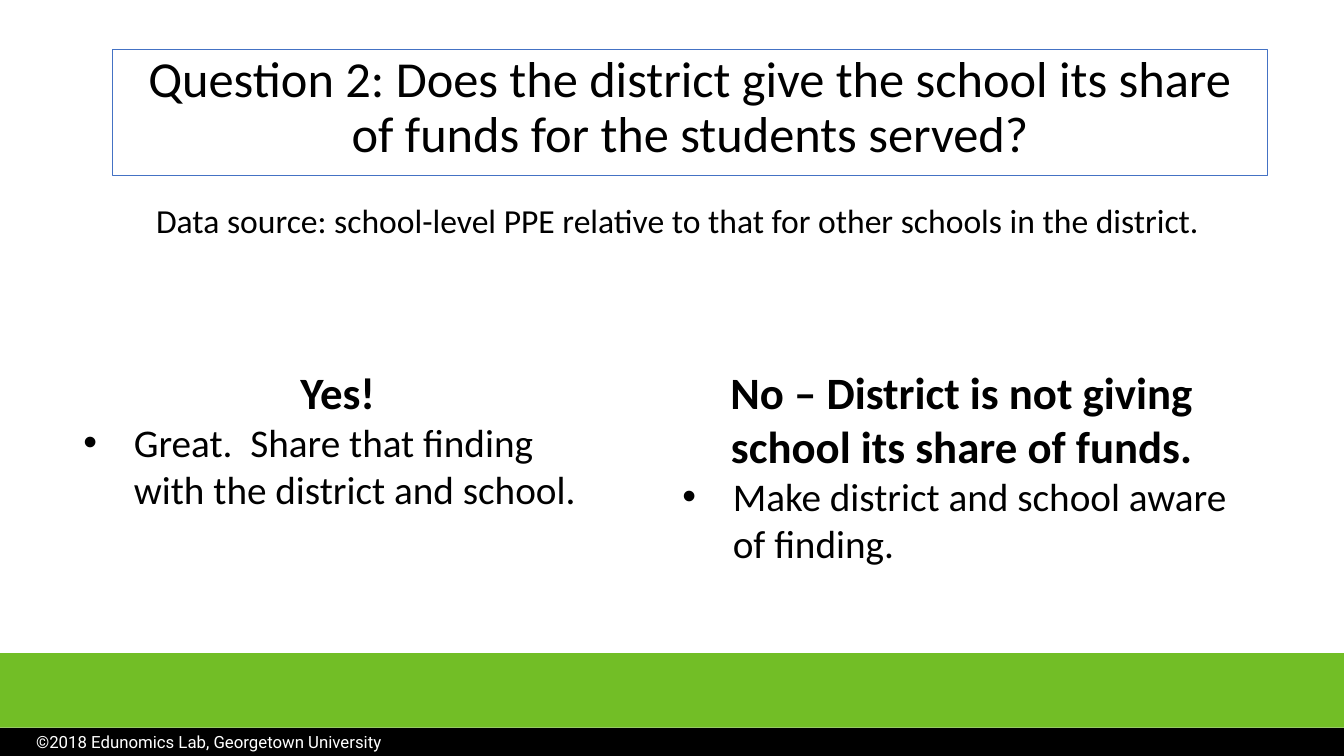
import pptx
import pptx.dml.color
import pptx.enum.shapes
import pptx.enum.text
import pptx.util
from lxml import etree
from pptx.util import Inches

ALIGN = pptx.enum.text.PP_ALIGN


def color(hex_string):
    return pptx.dml.color.RGBColor.from_string(hex_string)


class SlideBuilder:
    body_font = "Calibri"
    footer_font = "Roboto"
    black, white, green, blue = "000000", "FFFFFF", "72BE26", "4472C4"

    def __init__(self, presentation):
        self.slide = presentation.slides.add_slide(presentation.slide_layouts[5])

    def format_text(self, paragraph, size, font=None, ink=None, bold=False, align=ALIGN.CENTER):
        paragraph.alignment = align
        for run in paragraph.runs:
            run.font.name = font or self.body_font
            run.font.size = pptx.util.Pt(size)
            run.font.bold = bold
            run.font.color.rgb = color(ink or self.black)

    def title(self, text, left, top, width, height):
        shape = self.slide.shapes.title
        shape.left, shape.top = Inches(left), Inches(top)
        shape.width, shape.height = Inches(width), Inches(height)
        shape.line.color.rgb = color(self.blue)
        shape.line.width = pptx.util.Pt(0.75)
        frame = shape.text_frame
        frame.text = text
        frame.word_wrap = True
        frame.auto_size = pptx.enum.text.MSO_AUTO_SIZE.NONE
        frame.vertical_anchor = pptx.enum.text.MSO_ANCHOR.TOP
        frame.paragraphs[0].line_spacing = 0.9
        self.format_text(frame.paragraphs[0], 36)

    def text(self, text, left, top, width, height, size, **style):
        box = self.slide.shapes.add_textbox(
            Inches(left), Inches(top), Inches(width), Inches(height))
        frame = box.text_frame
        frame.word_wrap = True
        frame.text = text
        self.format_text(frame.paragraphs[0], size, **style)
        return frame

    def answer(self, heading, advice, left, top, width, height):
        """Add a bold centred heading with one bulleted line of advice below."""
        frame = self.text(heading, left, top, width, height, 32, bold=True)
        paragraph = frame.add_paragraph()
        paragraph.text = advice
        properties = paragraph._p.get_or_add_pPr()
        properties.set("marL", str(Inches(0.5)))
        properties.set("indent", str(Inches(-0.5)))
        namespace = pptx.oxml.ns.qn
        etree.SubElement(properties, namespace("a:buFont"), typeface="Arial")
        etree.SubElement(properties, namespace("a:buChar"), char="•")
        self.format_text(paragraph, 28, align=ALIGN.LEFT)

    def band(self, fill, top, height):
        """Add a full-width bar without an outline."""
        shape = self.slide.shapes.add_shape(
            pptx.enum.shapes.MSO_SHAPE.RECTANGLE,
            0, Inches(top), Inches(13.33), Inches(height))
        shape.shadow.inherit = False
        shape.fill.solid()
        shape.fill.fore_color.rgb = color(fill)
        shape.line.fill.background()


def main():
    presentation = pptx.Presentation()
    presentation.slide_width = Inches(13.33)
    presentation.slide_height = Inches(7.5)
    builder = SlideBuilder(presentation)

    builder.title("Question 2: Does the district give the school its share "
                  "of funds for the students served?", 1.12, 0.49, 11.45, 1.25)
    builder.answer("Yes!", "Great.  Share that finding with the district and school.",
                   0.73, 3.57, 5.24, 1.58)
    builder.answer("No – District is not giving school its share of funds.",
                   "Make district and school aware of finding.",
                   6.67, 3.57, 5.74, 2.12)
    builder.band(builder.black, 7.22, 0.28)
    builder.text("©2018 Edunomics Lab, Georgetown University", 0.26, 7.21, 6.18, 0.3, 12,
                 font=builder.footer_font, ink=builder.white, align=ALIGN.LEFT)
    builder.band(builder.green, 6.48, 0.74)
    builder.text("Data source: school-level PPE relative to that for other schools "
                 "in the district.", 1.35, 1.93, 10.74, 0.5, 24)
    presentation.save("out.pptx")


if __name__ == "__main__":
    main()
